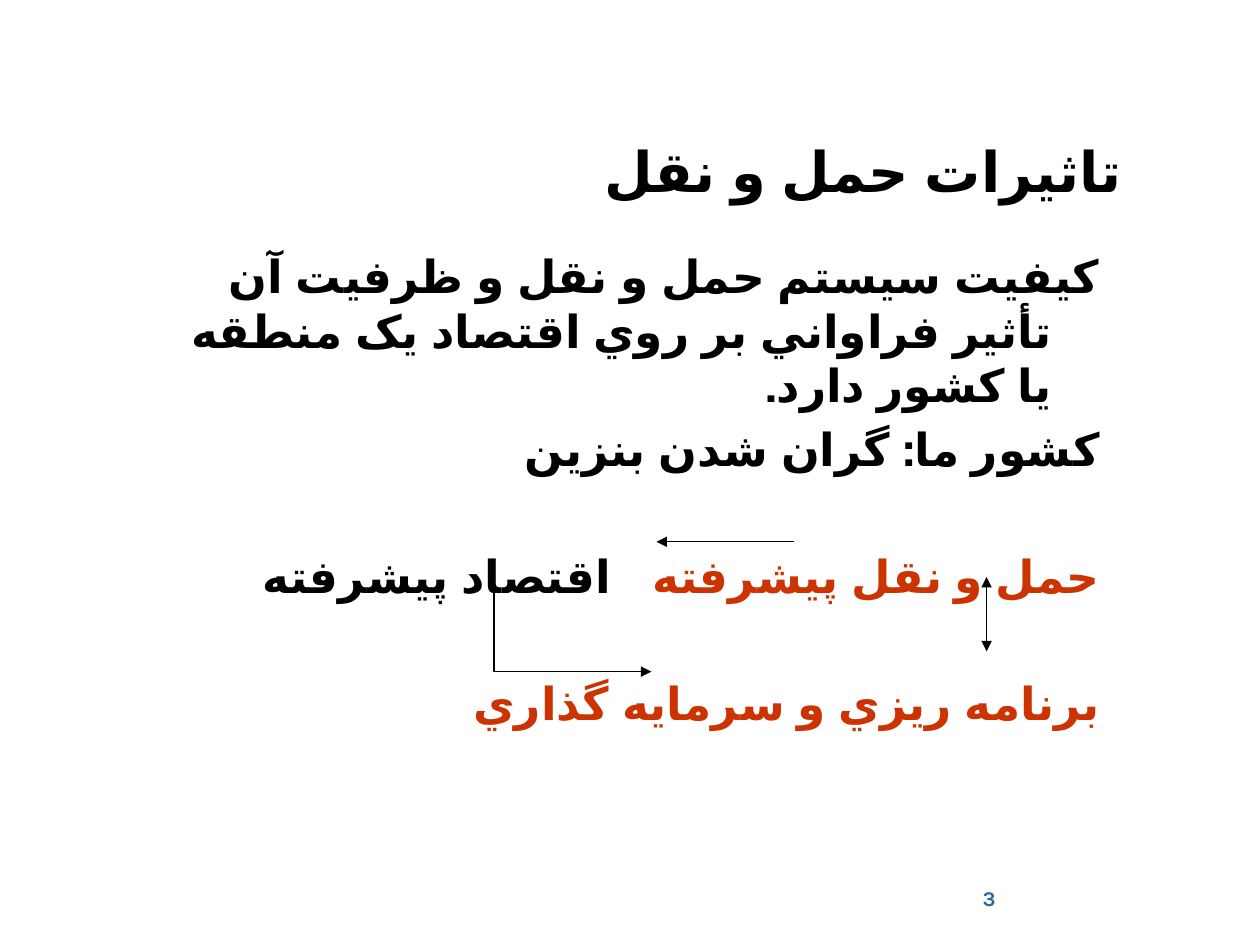
import pptx
import pptx.enum.lang
import pptx.enum.shapes
import pptx.enum.text
import pptx.oxml
import pptx.oxml.ns
import pptx.util

WIDTH, HEIGHT = 10, 7.5
FONT = "Karla"
COLORS = {"text": "000000", "accent": "CC3300", "number": "336699"}
BODY_SIZE = 26
HANGING = 0.38
LINE_GAP, SECTION_GAP = 5.2, 41.5
ANCHOR = pptx.enum.text.MSO_ANCHOR

# Each paragraph: space before in points, then its (text, colour) spans
BODY = [
    (0, [("کيفيت سيستم حمل و نقل و ظرفيت آن تأثير فراواني بر روي اقتصاد يک منطقه يا کشور دارد.", "text")]),
    (LINE_GAP, [("کشور ما: گران شدن بنزين", "text")]),
    (SECTION_GAP, [("حمل و نقل پيشرفته \t\t", "accent"), ("اقتصاد پيشرفته", "text")]),
    (SECTION_GAP, [("برنامه ريزي و سرمايه گذاري", "accent")]),
]

# Each arrow: start, end, arrowheads
ELBOW = (3.92, 5.33)
ARROWS = [
    ((6.3, 4.3), (5.21, 4.3), ["tailEnd"]),
    ((7.83, 4.58), (7.83, 5.17), ["headEnd", "tailEnd"]),
    ((3.92, 4.58), ELBOW, []),
    (ELBOW, (5.17, 5.33), ["tailEnd"]),
]


def add_child(parent, tag, **attributes):
    child = pptx.oxml.parse_xml(f"<a:{tag} {pptx.oxml.ns.nsdecls('a')}/>")
    for name, value in attributes.items():
        child.set(name, value)
    parent.append(child)


def style_span(span, size, color):
    span.font.size = pptx.util.Pt(size)
    span.font.bold = True
    span.font.color.rgb = pptx.dml.color.RGBColor.from_string(COLORS[color])
    span.font.name = FONT
    span.font.language_id = pptx.enum.lang.MSO_LANGUAGE_ID.FARSI


def align_right(para, rtl=True):
    para.alignment = pptx.enum.text.PP_ALIGN.RIGHT
    if rtl:
        para._p.get_or_add_pPr().set("rtl", "1")


def prepare_frame(box, anchor):
    frame = box.text_frame
    frame.word_wrap = True
    frame.auto_size = pptx.enum.text.MSO_AUTO_SIZE.NONE
    frame.vertical_anchor = anchor
    return frame


def add_box(page, area, anchor):
    box = page.shapes.add_textbox(*map(pptx.util.Inches, area))
    return prepare_frame(box, anchor)


def set_title(page, text, area):
    title = page.shapes.title
    title.left, title.top, title.width, title.height = map(pptx.util.Inches, area)
    frame = prepare_frame(title, ANCHOR.BOTTOM)
    frame.text = text
    para = frame.paragraphs[0]
    align_right(para)
    style_span(para.runs[0], 32, "text")


def add_body(page, area):
    frame = add_box(page, area, ANCHOR.TOP)
    for index, (gap, spans) in enumerate(BODY):
        para = frame.add_paragraph() if index else frame.paragraphs[0]
        align_right(para)
        para.space_before = pptx.util.Pt(gap)
        margin = pptx.util.Inches(HANGING)
        para._p.pPr.set("marL", str(margin))
        para._p.pPr.set("indent", str(-margin))
        for text, color in spans:
            span = para.add_run()
            span.text = text
            style_span(span, BODY_SIZE, color)


def add_page_number(page, number, area):
    frame = add_box(page, area, ANCHOR.MIDDLE)
    frame.text = number
    para = frame.paragraphs[0]
    align_right(para, rtl=False)
    style_span(para.runs[0], 12, "number")


def add_arrow(page, start, end, heads):
    arrow = page.shapes.add_connector(
        pptx.enum.shapes.MSO_CONNECTOR.STRAIGHT, *map(pptx.util.Inches, start + end))
    arrow.line.width = pptx.util.Pt(0.75)
    arrow.line.color.rgb = pptx.dml.color.RGBColor.from_string(COLORS["text"])
    for head in heads:
        add_child(arrow.line._get_or_add_ln(), head, type="triangle")
    add_child(arrow._element.spPr, "effectLst")


def main():
    deck = pptx.Presentation()
    deck.slide_width = pptx.util.Inches(WIDTH)
    deck.slide_height = pptx.util.Inches(HEIGHT)
    page = deck.slides.add_slide(deck.slide_layouts.get_by_name("Title Only"))
    add_page_number(page, "3", (5.92, 6.92, 2.08, 0.41))
    add_body(page, (1.33, 1.92, 0.75 * WIDTH, 4.67))
    for start, end, heads in ARROWS:
        add_arrow(page, start, end, heads)
    set_title(page, "تاثيرات حمل و نقل", (1.5, 0.42, 0.75 * WIDTH, 1.25))
    deck.save("out.pptx")


if __name__ == "__main__":
    main()
